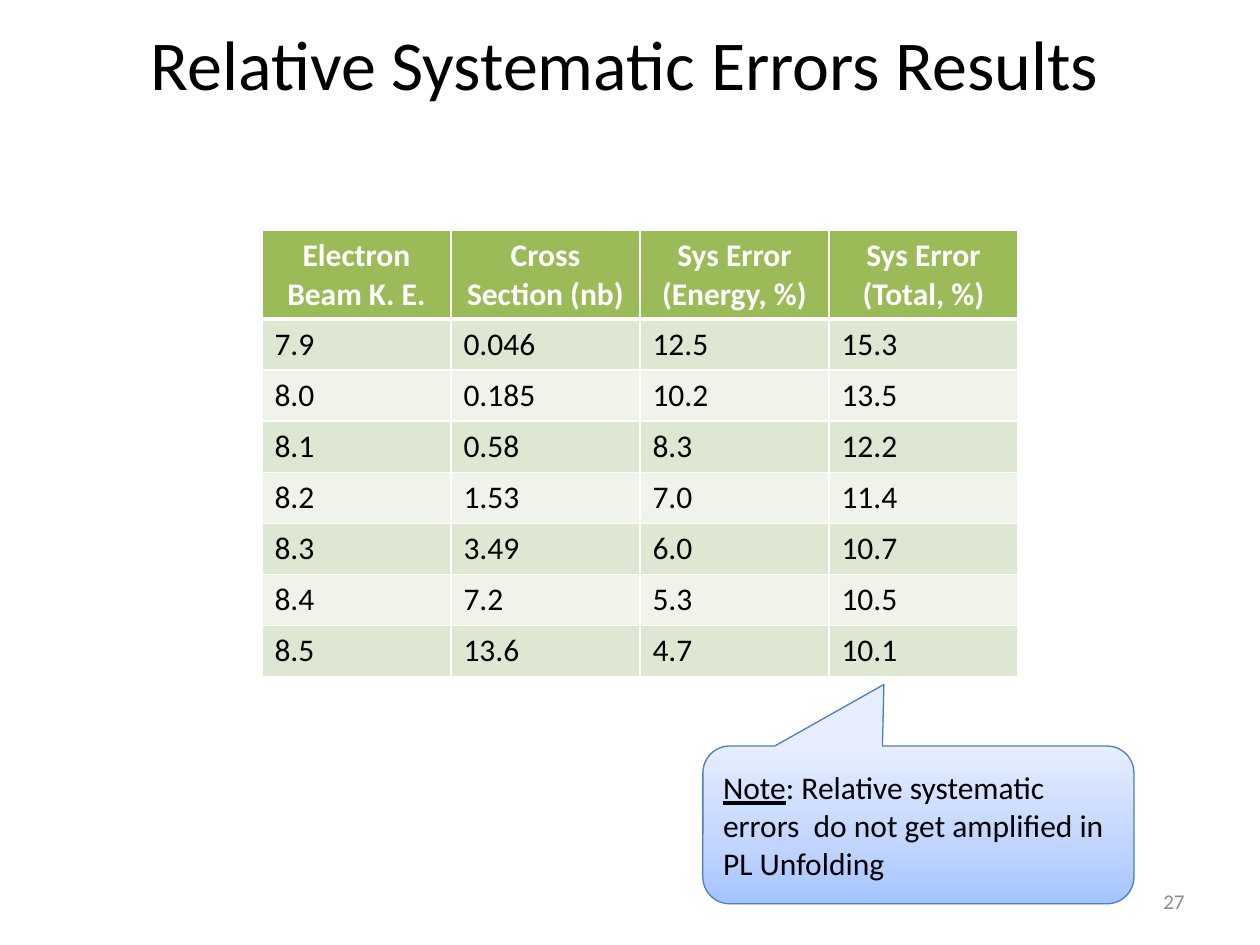
from copy import deepcopy

from lxml.etree import SubElement
from pptx import Presentation
from pptx.dml.color import RGBColor
from pptx.enum.shapes import MSO_SHAPE
from pptx.enum.text import MSO_ANCHOR, PP_ALIGN
from pptx.oxml.ns import qn
from pptx.util import Cm, Pt

HEADINGS = ["Electron\nBeam K. E.", "Cross Section (nb)",
            "Sys Error\n(Energy, %)", "Sys Error\n(Total, %)"]
RESULTS = [
    ["7.9", "0.046", "12.5", "15.3"],
    ["8.0", "0.185", "10.2", "13.5"],
    ["8.1", "0.58", "8.3", "12.2"],
    ["8.2", "1.53", "7.0", "11.4"],
    ["8.3", "3.49", "6.0", "10.7"],
    ["8.4", "7.2", "5.3", "10.5"],
    ["8.5", "13.6", "4.7", "10.1"],
]


def color(code):
    """Turn a hex string into a colour."""
    return RGBColor.from_string(code)


def write(frame, text, size=18, ink="000000", bold=False, align=PP_ALIGN.LEFT,
          anchor=MSO_ANCHOR.TOP, underlined=""):
    """Fill a text frame, one paragraph per line, after an underlined lead."""
    frame.word_wrap = True
    frame.vertical_anchor = anchor
    for index, line in enumerate(text.split("\n")):
        paragraph = frame.paragraphs[0] if index == 0 else frame.add_paragraph()
        paragraph.alignment = align
        lead = underlined if index == 0 else ""
        for part, underline in ((lead, True), (line, False)):
            if part:
                run = paragraph.add_run()
                run.text = part
                run.font.name = "Calibri"
                run.font.size = Pt(size)
                run.font.bold = bold
                run.font.underline = underline
                run.font.color.rgb = color(ink)


def add_label(slide, left, top, width, height, text, **style):
    """Add a text box centred vertically."""
    label = slide.shapes.add_textbox(Cm(left), Cm(top), Cm(width), Cm(height))
    write(label.text_frame, text, anchor=MSO_ANCHOR.MIDDLE, **style)


def set_borders(cell, top=1, bottom=1):
    """Draw white borders round a cell, with widths in points."""
    properties = cell._tc.get_or_add_tcPr()
    for side, width in (("L", 1), ("R", 1), ("T", top), ("B", bottom)):
        border = SubElement(properties, qn(f"a:ln{side}"), w=str(Pt(width)))
        solid = SubElement(border, qn("a:solidFill"))
        SubElement(solid, qn("a:srgbClr"), val="FFFFFF")


def add_results_table(slide):
    """Add the table of cross sections and systematic errors."""
    rows = [HEADINGS] + RESULTS
    table = slide.shapes.add_table(len(rows), len(HEADINGS), Cm(5.28), Cm(4.65),
                                   Cm(15.24), Cm(9)).table
    for row_index, values in enumerate(rows):
        is_header = row_index == 0
        table.rows[row_index].height = Cm(1.78 if is_header else 1.03)
        band = "DEE7D1" if row_index % 2 else "EFF3EA"
        for column_index, value in enumerate(values):
            cell = table.cell(row_index, column_index)
            set_borders(cell, top=3 if row_index == 1 else 1,
                        bottom=3 if is_header else 1)
            cell.fill.solid()
            cell.fill.fore_color.rgb = color("9BBB59" if is_header else band)
            if is_header:
                write(cell.text_frame, value, ink="FFFFFF", bold=True,
                      align=PP_ALIGN.CENTER)
            else:
                write(cell.text_frame, value)


def fill_gradient(shape, stops, angle):
    """Fill a shape with a linear gradient of (position, colour) stops."""
    shape.fill.gradient()
    shape.fill.gradient_angle = angle
    stop_list = shape._element.spPr.find(f".//{qn('a:gsLst')}")
    while len(stop_list) < len(stops):
        stop_list.append(deepcopy(stop_list[-1]))
    for stop, (position, code) in zip(shape.fill.gradient_stops, stops):
        stop.position = position
        stop.color.rgb = color(code)


def add_note(slide):
    """Add the callout that points at the total error column."""
    note = slide.shapes.add_shape(MSO_SHAPE.ROUNDED_RECTANGULAR_CALLOUT,
                                  Cm(14.17), Cm(15.04), Cm(8.69), Cm(3.18))
    for index, value in enumerate((-0.08, -0.89, 0.17)):
        note.adjustments[index] = value
    note.shadow.inherit = False
    fill_gradient(note, [(0, "A4C4FF"), (0.35, "BFD4FF"), (1, "E6EEFF")], 90)
    note.line.color.rgb = color("4B7EBC")
    note.line.width = Pt(0.75)
    write(note.text_frame,
          ": Relative systematic errors  do not get amplified in PL Unfolding",
          underlined="Note", anchor=MSO_ANCHOR.MIDDLE)


def main():
    """Build and save the slide."""
    presentation = Presentation()
    presentation.slide_width = Cm(25.4)
    presentation.slide_height = Cm(19.05)
    slide = presentation.slides.add_slide(presentation.slide_layouts[6])
    add_label(slide, 18.21, 17.65, 5.92, 1.02, "27", size=12, ink="8C8C8C",
              align=PP_ALIGN.RIGHT)
    add_results_table(slide)
    add_label(slide, 0.43, 0, 24.33, 2.54, "Relative Systematic Errors Results",
              size=40, align=PP_ALIGN.CENTER)
    add_note(slide)
    presentation.save("out.pptx")


if __name__ == "__main__":
    main()
